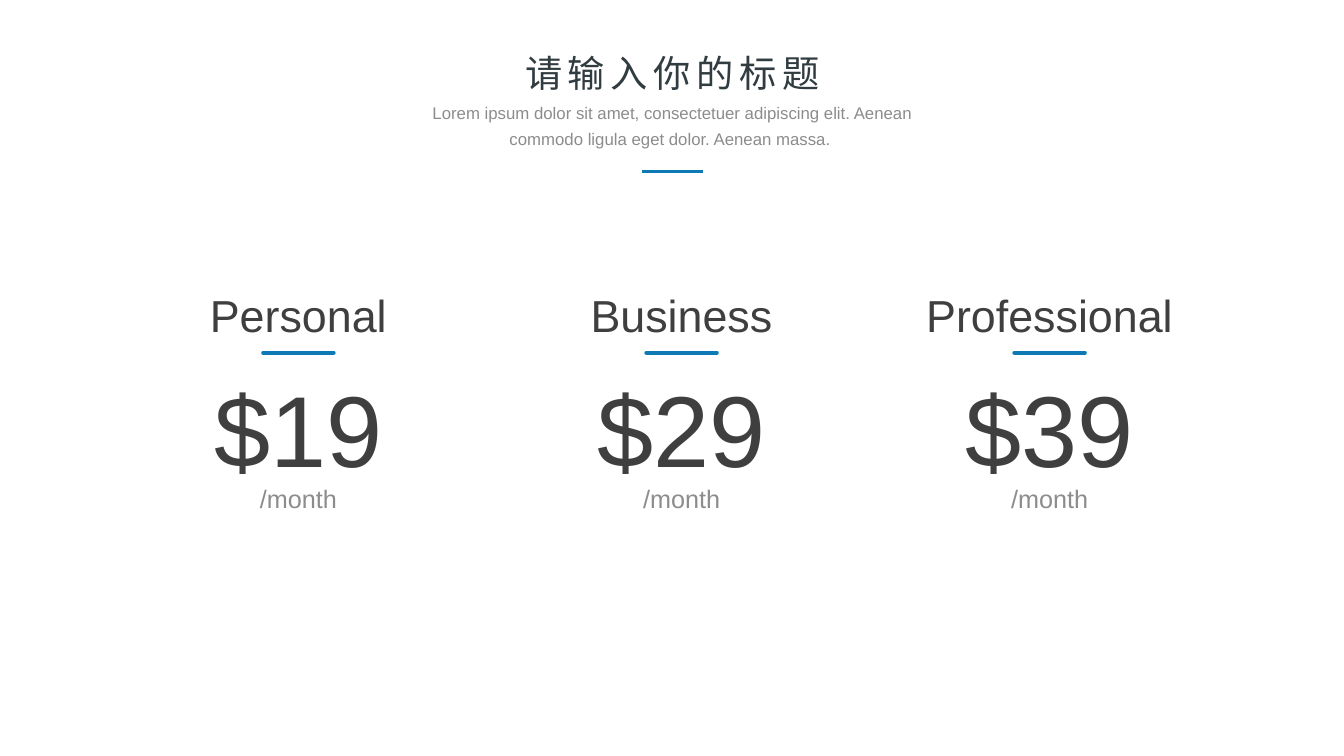
from pptx import Presentation
from pptx.dml.color import RGBColor
from pptx.enum.shapes import MSO_CONNECTOR as CONN
from pptx.enum.text import MSO_AUTO_SIZE as AUTO, PP_ALIGN as ALIGN
from pptx.oxml.ns import qn
from pptx.util import Inches, Pt
from lxml import etree

BLUE, DARK, GREY, TITLE = "0D7AB5", "3F3F3F", "8C8C8C", "313C41"

# plan name, price, column centre, name box width
PLANS = [
    ("Personal", "$19", 2.96, 2.47),
    ("Business", "$29", 6.76, 2.47),
    ("Professional", "$39", 10.41, 2.98),
]


def rgb(value):
    return RGBColor.from_string(value)


def add_text(slide, text, center, top, width, height, size, color,
             line_spacing=None, wrap=True, tracking=None):
    """Add a centred one-paragraph text box around a vertical axis."""
    box = slide.shapes.add_textbox(Inches(center - width / 2), Inches(top),
                                   Inches(width), Inches(height))
    tf = box.text_frame
    tf.text = text
    tf.word_wrap = wrap
    tf.auto_size = AUTO.SHAPE_TO_FIT_TEXT
    p = tf.paragraphs[0]
    p.alignment = ALIGN.CENTER
    if line_spacing is not None:
        p.line_spacing = line_spacing
    r = p.runs[0]
    r.font.name = "Arial"
    r.font.size = Pt(size)
    r.font.color.rgb = rgb(color)
    if tracking is not None:
        r.font._element.set("spc", str(tracking * 100))


def add_rule(slide, center, y, length, weight, rounded=False):
    """Add a short horizontal accent line."""
    line = slide.shapes.add_connector(CONN.STRAIGHT,
                                      Inches(center - length / 2), Inches(y),
                                      Inches(center + length / 2), Inches(y))
    line.line.color.rgb = rgb(BLUE)
    line.line.width = Pt(weight)
    sp_pr = line._element.spPr
    if rounded:
        sp_pr.find(qn("a:ln")).set("cap", "rnd")
    etree.SubElement(sp_pr, qn("a:effectLst"))


def add_plan(slide, name, price, center, name_width):
    add_text(slide, "/month", center, 4.77, 1.57, 0.38, 18, GREY,
             line_spacing=Pt(20))
    add_text(slide, price, center, 3.59, 2.38, 1.31, 72, DARK)
    add_rule(slide, center, 3.5, 0.7, 2.75, rounded=True)
    add_text(slide, name, center, 2.81, name_width, 0.64, 32, DARK)


def add_header(slide, center):
    add_rule(slide, center, 1.7, 0.6, 2)
    add_text(slide, "请输入你的标题", center, 0.54, 3.21, 0.46, 26.6, TITLE,
             line_spacing=0.8, wrap=False, tracking=4)
    add_text(slide, "Lorem ipsum dolor sit amet, consectetuer adipiscing elit. "
             "Aenean commodo ligula eget dolor. Aenean massa. ",
             center, 0.91, 5.25, 0.6, 12, GREY, line_spacing=1.3)


def main():
    prs = Presentation()
    prs.slide_width, prs.slide_height = Inches(13.33), Inches(7.5)
    slide = prs.slides.add_slide(prs.slide_layouts[6])

    # Pricing columns
    for plan in PLANS:
        add_plan(slide, *plan)

    # Title, subtitle and accent line
    add_header(slide, 6.67)

    prs.save("out.pptx")


if __name__ == "__main__":
    main()
